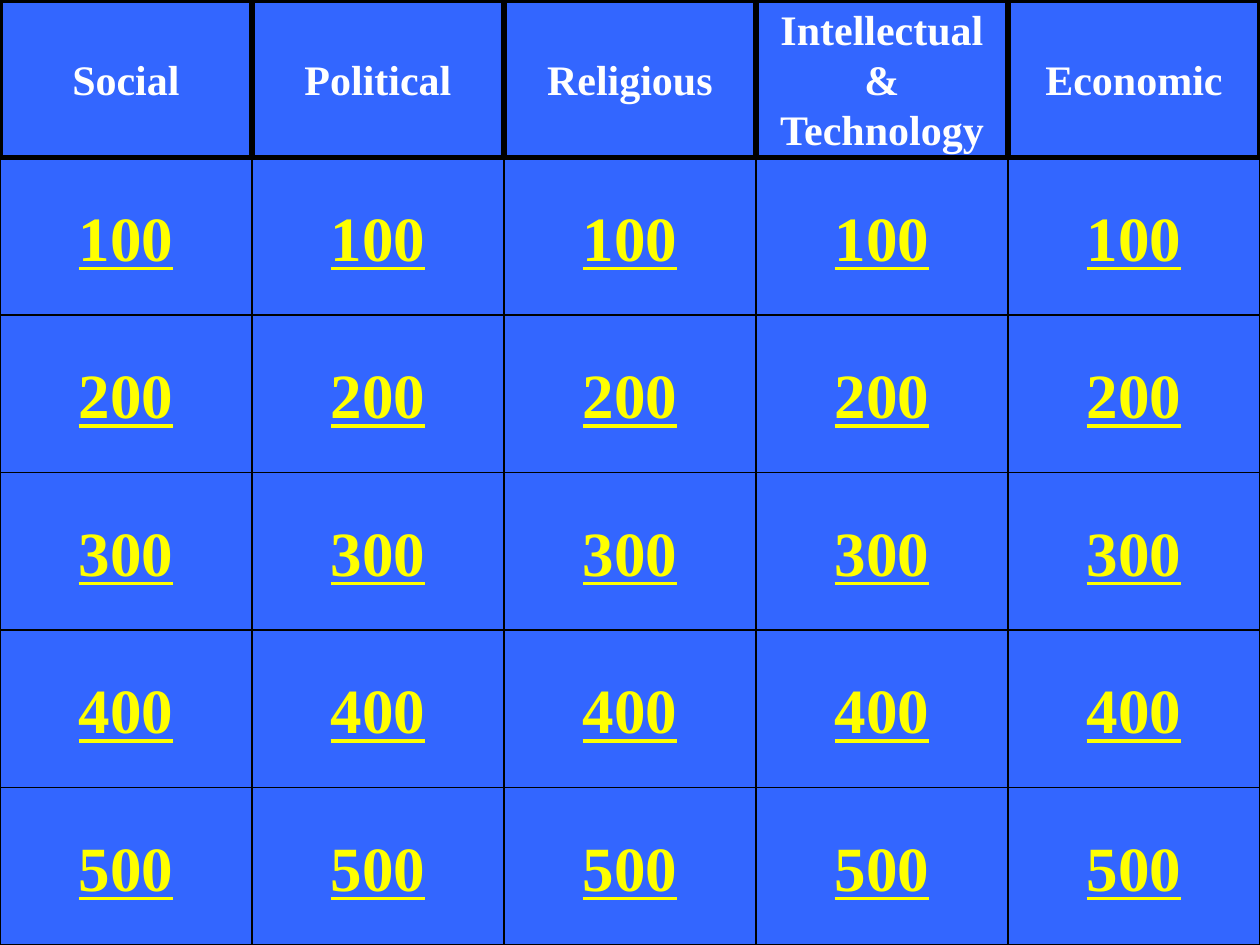
from pptx import Presentation
from pptx import util as u
from pptx.dml.color import RGBColor
from pptx.enum import shapes, text

BLUE = RGBColor(0x33, 0x66, 0xFF)
BLACK = RGBColor(0, 0, 0)
WHITE = RGBColor(0xFF, 0xFF, 0xFF)
YELLOW = RGBColor(0xFF, 0xFF, 0)

CATEGORIES = ["Social", "Political", "Religious",
              "Intellectual\n&\nTechnology", "Economic"]
POINTS = [100, 200, 300, 400, 500]
CELL_WIDTH, CELL_HEIGHT = 2, 1.25


def write_text(frame, content, *, size, color, underline=False):
    """Centre the content in the frame, one paragraph per line."""
    frame.word_wrap = False
    frame.vertical_anchor = text.MSO_ANCHOR.MIDDLE
    frame.text = content
    for paragraph in frame.paragraphs:
        paragraph.alignment = text.PP_ALIGN.CENTER
        for run in paragraph.runs:
            font = run.font
            font.name = "Times New Roman"
            font.size = u.Pt(size)
            font.bold = True
            font.underline = underline
            font.color.rgb = color


class QuizBoard:
    def __init__(self, slide):
        self.slide = slide
        slide.background.fill.solid()
        slide.background.fill.fore_color.rgb = BLUE

    def cell(self, preset, column, row, border):
        box = self.slide.shapes.add_shape(
            preset,
            u.Inches(column * CELL_WIDTH), u.Inches(row * CELL_HEIGHT),
            u.Inches(CELL_WIDTH), u.Inches(CELL_HEIGHT))
        box.shadow.inherit = False
        box.fill.solid()
        box.fill.fore_color.rgb = BLUE
        box.line.color.rgb = BLACK
        box.line.width = u.Pt(border)
        return box

    def points_button(self, column, row, points):
        button = self.cell(shapes.MSO_SHAPE.ACTION_BUTTON_CUSTOM, column, row, 0.75)
        write_text(button.text_frame, str(points),
                   size=36, color=YELLOW, underline=True)

    def category_header(self, column, category):
        header = self.cell(shapes.MSO_SHAPE.RECTANGLE, column, 0, 3)
        write_text(header.text_frame, category, size=24, color=WHITE)


def main():
    deck = Presentation()
    deck.slide_width = u.Inches(10)
    deck.slide_height = u.Inches(7.5)
    board = QuizBoard(deck.slides.add_slide(deck.slide_layouts[6]))

    for column in range(len(CATEGORIES)):
        for row, points in enumerate(POINTS, start=1):
            board.points_button(column, row, points)
    for column, category in enumerate(CATEGORIES):
        board.category_header(column, category)

    deck.save("out.pptx")


if __name__ == "__main__":
    main()
